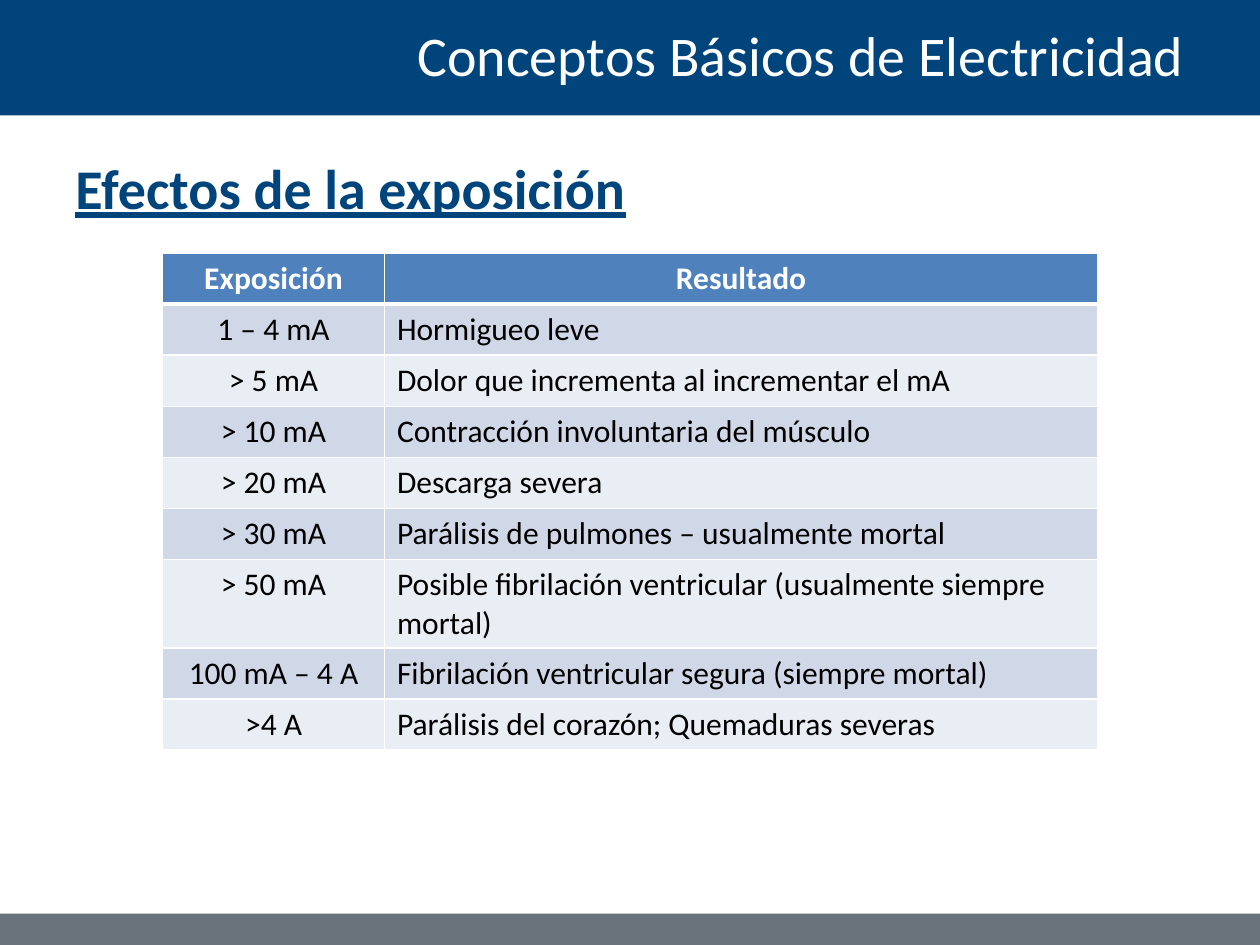
"""Builds the slide on the effects of exposure to electric current."""
from dataclasses import dataclass

from lxml.etree import SubElement
from pptx import Presentation
from pptx.dml.color import RGBColor
from pptx.enum.shapes import MSO_SHAPE as Shape
from pptx.enum.text import MSO_ANCHOR as Anchor, PP_ALIGN as Align
from pptx.oxml.ns import qn
from pptx.util import Cm, Pt

EFFECTS = [
    ("1 – 4 mA", "Hormigueo leve"),
    ("> 5 mA", "Dolor que incrementa al incrementar el mA"),
    ("> 10 mA", "Contracción involuntaria del músculo"),
    ("> 20 mA", "Descarga severa"),
    ("> 30 mA", "Parálisis de pulmones – usualmente mortal"),
    ("> 50 mA", "Posible fibrilación ventricular (usualmente siempre mortal)"),
    ("100 mA – 4 A", "Fibrilación ventricular segura (siempre mortal)"),
    (">4 A", "Parálisis del corazón; Quemaduras severas"),
]


def colour(code):
    return RGBColor.from_string(code)


@dataclass
class SlideBuilder:
    """Holds the style and the page being drawn."""
    page: object
    font: str = "Calibri"
    navy: str = "00447C"
    grey: str = "6A737B"
    white: str = "FFFFFF"
    black: str = "000000"
    header: str = "4F81BD"
    stripes: tuple = ("D0D8E8", "E9EDF4")

    def band(self, top, height, fill):
        bar = self.page.shapes.add_shape(
            Shape.RECTANGLE, 0, Cm(top), Cm(25.4), Cm(height))
        bar.shadow.inherit = False
        bar.fill.solid()
        bar.fill.fore_color.rgb = colour(fill)
        bar.line.fill.background()

    def add_span(self, frame, text, size, ink, align=Align.LEFT, bold=False, underline=False):
        para = frame.paragraphs[0]
        para.alignment = align
        span = para.add_run()
        span.text = text
        span.font.name = self.font
        span.font.size = Pt(size)
        span.font.bold = bold
        span.font.underline = underline
        span.font.color.rgb = colour(ink)

    def text(self, left, top, width, height, text, ink, anchor=Anchor.TOP, **style):
        box = self.page.shapes.add_textbox(Cm(left), Cm(top), Cm(width), Cm(height))
        frame = box.text_frame
        frame.word_wrap = True
        frame.vertical_anchor = anchor
        self.add_span(frame, text, 32, ink, **style)

    def borders(self, cell, bottom):
        properties = cell._tc.get_or_add_tcPr()
        for side, width in (("L", 1), ("R", 1), ("T", 1), ("B", bottom)):
            line = SubElement(properties, qn(f"a:ln{side}"), w=str(Pt(width)))
            fill = SubElement(line, qn("a:solidFill"))
            SubElement(fill, qn("a:srgbClr"), val=self.white)

    def cell(self, cell, text, fill, ink, align, bold=False):
        self.borders(cell, 3 if bold else 1)
        cell.fill.solid()
        cell.fill.fore_color.rgb = colour(fill)
        self.add_span(cell.text_frame, text, 18, ink, align, bold)

    def table(self, left, top, widths, row_height, titles, rows):
        count = len(rows) + 1
        table = self.page.shapes.add_table(
            count, len(widths), Cm(left), Cm(top),
            Cm(sum(widths)), Cm(row_height * count)).table
        for column, width in zip(table.columns, widths):
            column.width = Cm(width)
        for row in table.rows:
            row.height = Cm(row_height)
        for column, title in enumerate(titles):
            self.cell(table.cell(0, column), title, self.header, self.white,
                      Align.CENTER, bold=True)
        for number, values in enumerate(rows, 1):
            fill = self.stripes[(number - 1) % 2]
            for column, value in enumerate(values):
                align = Align.LEFT if column else Align.CENTER
                self.cell(table.cell(number, column), value, fill, self.black, align)


def main():
    deck = Presentation()
    deck.slide_width, deck.slide_height = Cm(25.4), Cm(19.05)
    slide = SlideBuilder(deck.slides.add_slide(deck.slide_layouts[6]))
    slide.band(0, 2.33, slide.navy)
    slide.band(18.42, 0.63, slide.grey)
    slide.text(4.88, 0.2, 19.25, 1.78, "Conceptos Básicos de Electricidad",
               slide.white, Anchor.MIDDLE, align=Align.RIGHT)
    slide.text(1.27, 2.97, 22.86, 1.8, "Efectos de la exposición",
               slide.navy, bold=True, underline=True)
    slide.table(3.28, 5.1, (4.47, 14.38), 1.03, ("Exposición", "Resultado"), EFFECTS)
    deck.save("out.pptx")


if __name__ == "__main__":
    main()
